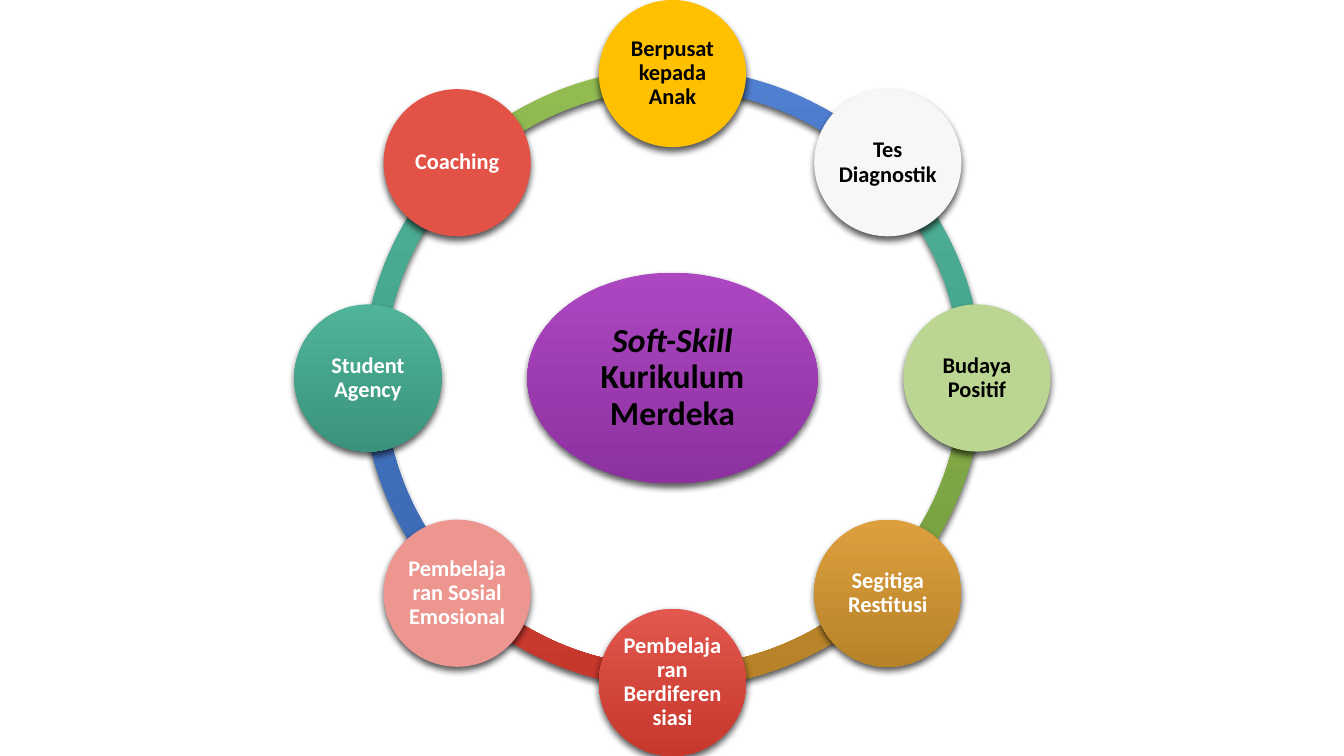
import math

from lxml import etree
from pptx import Presentation
from pptx.dml.color import RGBColor
from pptx.enum import shapes, text
from pptx.oxml import ns
from pptx.util import Inches, Pt

CENTER_X, CENTER_Y = 6.67, 3.75
ORBIT, RING_SIZE, TOPIC_SIZE = 3.02, 6.14, 1.46
EIGHTH_TURN, FULL_TURN = 27, 216  # block arc units: 0.6 units per degree

GREEN = ("92BC52", "759A3C")
TEAL = ("50B49A", "3A927C")
BLUE = ("507FCF", "3765AE")
RED = ("E2574E", "C6372C")
GOLD = ("DEA03E", "B78228")
PURPLE = ("AC47C1", "8D30A0")
BLACK, WHITE = "000000", "FFFFFF"

# Arc colours, counterclockwise from the upper left
ARC_COLORS = [GREEN, TEAL, BLUE, RED, GOLD, GREEN, TEAL, BLUE]

# Topics, clockwise from the top: wording, fill, text colour
TOPICS = [
    ("Berpusat kepada Anak", ("FFC000",), BLACK),
    ("Tes Diagnostik", ("F7F7F7",), BLACK),
    ("Budaya Positif", ("BBD592",), BLACK),
    ("Segitiga Restitusi", GOLD, WHITE),
    ("Pembelajaran Berdiferensiasi", RED, WHITE),
    ("Pembelajaran Sosial Emosional", ("ED968F",), WHITE),
    ("Student Agency", TEAL, WHITE),
    ("Coaching", ("E25247",), WHITE),
]


def rgb(color):
    return RGBColor.from_string(color)


class CycleSlide:
    """Holds the text style and the slide being drawn."""

    style = {"name": "Calibri", "bold": True}

    def __init__(self, presentation):
        self.slide = presentation.slides.add_slide(presentation.slide_layouts[6])

    def shape(self, kind, x, y, width, height, colors):
        """Add a shape centred on x, y with a soft shadow below it."""
        shape = self.slide.shapes.add_shape(
            kind, Inches(x - width / 2), Inches(y - height / 2),
            Inches(width), Inches(height))
        shape.line.fill.background()
        if len(colors) == 1:
            shape.fill.solid()
            shape.fill.fore_color.rgb = rgb(colors[0])
        else:
            shape.fill.gradient()
            shape.fill.gradient_angle = 270
            for stop, color in zip(shape.fill.gradient_stops, colors):
                stop.color.rgb = rgb(color)
        self.shadow(shape)
        return shape

    def shadow(self, shape):
        shape.shadow.inherit = False
        effects = shape._element.spPr.find(ns.qn("a:effectLst"))
        outer = etree.SubElement(
            effects, ns.qn("a:outerShdw"), blurRad=str(Pt(5)), dist=str(Pt(3)),
            dir="5400000", algn="ctr", rotWithShape="0")
        color = etree.SubElement(outer, ns.qn("a:srgbClr"), val=BLACK)
        etree.SubElement(color, ns.qn("a:alpha"), val="65000")

    def arc(self, start, colors):
        arc = self.shape(shapes.MSO_SHAPE.BLOCK_ARC, CENTER_X, CENTER_Y,
                         RING_SIZE, RING_SIZE, colors)
        arc.adjustments[0] = start
        arc.adjustments[1] = (start + EIGHTH_TURN) % FULL_TURN
        arc.adjustments[2] = 0.034

    def ellipse(self, x, y, width, height, colors, runs, size, color, inset):
        """Add an ellipse; runs are pairs of wording and italic."""
        ellipse = self.shape(shapes.MSO_SHAPE.OVAL, x, y, width, height, colors)
        frame = ellipse.text_frame
        frame_format = {"word_wrap": True, "vertical_anchor": text.MSO_ANCHOR.MIDDLE}
        for side in ("left", "top", "right", "bottom"):
            frame_format["margin_" + side] = Inches(inset)
        for key, value in frame_format.items():
            setattr(frame, key, value)
        label = frame.paragraphs[0]
        label.alignment = text.PP_ALIGN.CENTER
        label.line_spacing = 0.9
        for wording, italic in runs:
            run = label.add_run()
            run.text = wording
            run_format = {**self.style, "size": Pt(size), "italic": italic}
            for key, value in run_format.items():
                setattr(run.font, key, value)
            run.font.color.rgb = rgb(color)


def main():
    presentation = Presentation()
    presentation.slide_width = Inches(13.33)
    presentation.slide_height = Inches(7.5)
    cycle = CycleSlide(presentation)

    # Ring of arcs
    for step, colors in enumerate(ARC_COLORS):
        cycle.arc((135 - step * EIGHTH_TURN) % FULL_TURN, colors)

    # Central theme
    cycle.ellipse(CENTER_X, CENTER_Y, 2.88, 2.09, PURPLE,
                  [("Soft-Skill ", True), ("Kurikulum Merdeka", False)],
                  24, BLACK, 0.03)

    # Topics on the ring
    for step, (topic, colors, text_color) in enumerate(TOPICS):
        angle = math.tau * step / len(TOPICS)
        cycle.ellipse(CENTER_X + ORBIT * math.sin(angle),
                      CENTER_Y - ORBIT * math.cos(angle),
                      TOPIC_SIZE, TOPIC_SIZE, colors,
                      [(topic, False)], 16, text_color, 0.02)

    presentation.save("out.pptx")


if __name__ == "__main__":
    main()
